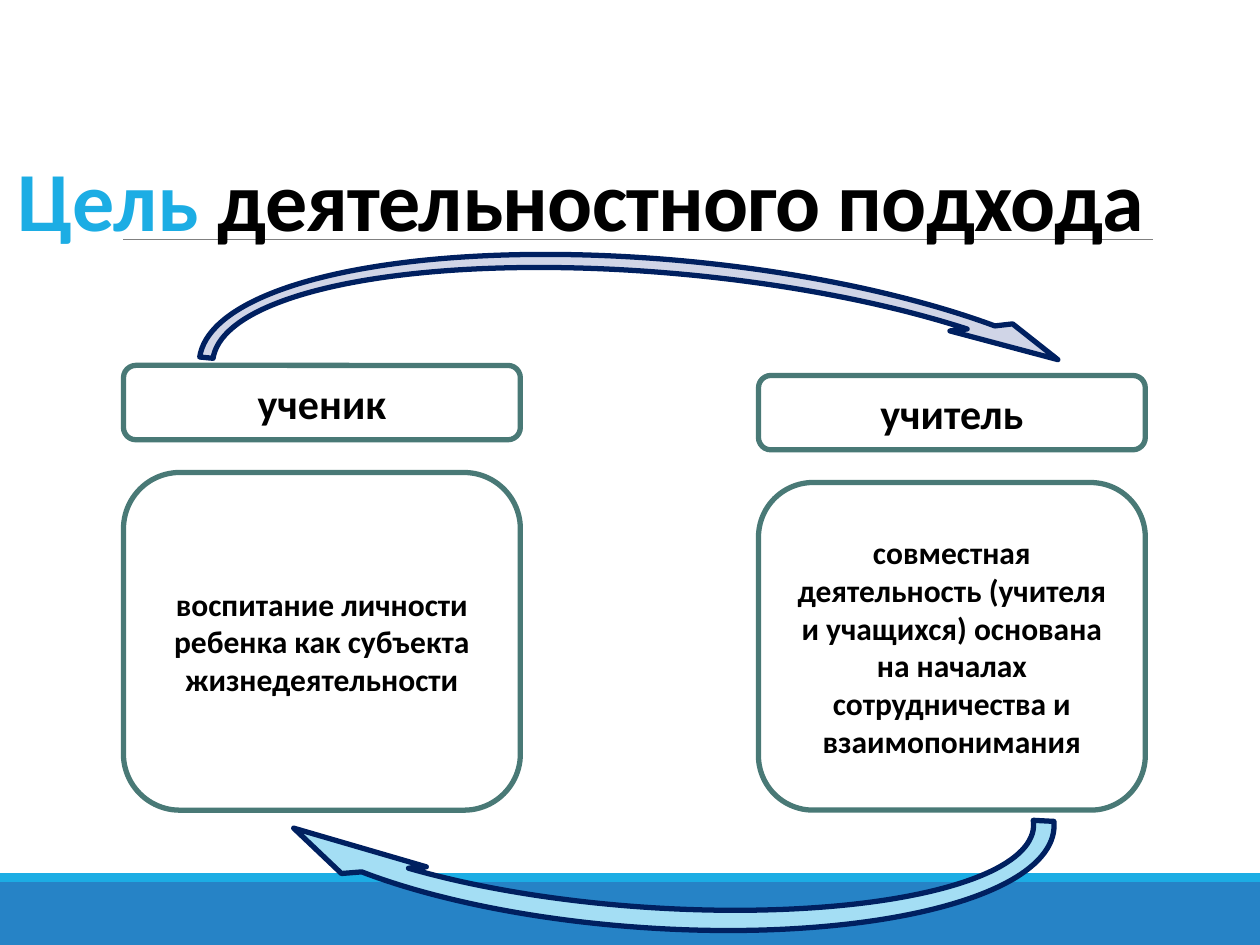
from dataclasses import dataclass
from lxml.etree import SubElement
from pptx import Presentation
from pptx.dml.color import RGBColor
from pptx.enum.shapes import MSO_CONNECTOR, MSO_SHAPE
from pptx.enum.text import MSO_ANCHOR, PP_ALIGN
from pptx.oxml.ns import qn
from pptx.util import Inches, Pt


@dataclass(frozen=True)
class Theme:
    font: str = "Calibri"
    title_size: int = 48
    heading_size: int = 24
    body_size: int = 18
    text: str = "000000"
    accent: str = "1CADE4"
    band: str = "2683C6"
    rule: str = "808080"
    card_fill: str = "FFFFFF"
    card_line: str = "497976"
    arrow_line: str = "002060"
    arrow_top: str = "D0D5E7"
    arrow_bottom: str = "A4DEF4"


THEME = Theme()
WIDTH, HEIGHT = 10, 7.5
CARD_BOTTOM = 6.43


def rgb(value):
    return RGBColor.from_string(value)


def add_box(s, kind, box, fill, line=None):
    sp = s.shapes.add_shape(kind, *map(Inches, box))
    sp.shadow.inherit = False
    sp.fill.solid()
    sp.fill.fore_color.rgb = rgb(fill)
    if line:
        sp.line.color.rgb = rgb(line)
        sp.line.width = Pt(3)
    else:
        sp.line.fill.background()
    return sp


def set_font(font, size, color):
    font.name, font.size, font.bold = THEME.font, Pt(size), True
    font.color.rgb = rgb(color)


def add_footer(s, box):
    """Wide band with a thin accent strip along its top."""
    left, top, width, height = box
    strip = 0.07
    add_box(s, MSO_SHAPE.RECTANGLE, (left, top + strip, width, height - strip), THEME.band)
    add_box(s, MSO_SHAPE.RECTANGLE, (left, top, width, strip), THEME.accent)


def add_rule(s, left, right, y):
    line = s.shapes.add_connector(MSO_CONNECTOR.STRAIGHT, *map(Inches, (left, y, right, y)))
    line.line.color.rgb = rgb(THEME.rule)
    line.line.width = Pt(0.5)
    SubElement(line._element.spPr, qn("a:effectLst"))


def add_title(s, box, accent_text, text):
    tf = s.shapes.add_textbox(*map(Inches, box)).text_frame
    tf.word_wrap = True
    tf.vertical_anchor = MSO_ANCHOR.BOTTOM
    p = tf.paragraphs[0]
    p.line_spacing = 0.85
    for words, color in ((accent_text, THEME.accent), (text, THEME.text)):
        r = p.add_run()
        r.text = words
        set_font(r.font, THEME.title_size, color)
    r.font._element.set("spc", "-50")  # slightly tighter letters


def add_card(s, box, text, size):
    sp = add_box(s, MSO_SHAPE.ROUNDED_RECTANGLE, box, THEME.card_fill, THEME.card_line)
    tf = sp.text_frame
    tf.word_wrap = True
    tf.vertical_anchor = MSO_ANCHOR.MIDDLE
    p = tf.paragraphs[0]
    p.text = text
    p.alignment = PP_ALIGN.CENTER
    set_font(p.font, size, THEME.text)


def add_role(s, box, heading, body):
    """Heading card above a body card that fills the rest of the box."""
    left, top, width, height = box
    head, gap = 0.59, 0.26
    add_card(s, (left, top, width, head), heading, THEME.heading_size)
    offset = head + gap
    add_card(s, (left, top + offset, width, height - offset), body, THEME.body_size)


def add_arrow(s, box, fill, rotation, adjustments, flipped=False):
    sp = add_box(s, MSO_SHAPE.CIRCULAR_ARROW, box, fill, THEME.arrow_line)
    for i, value in enumerate(adjustments):
        sp.adjustments[i] = value
    sp.rotation = rotation
    if flipped:
        xfrm = sp._element.spPr.find(qn("a:xfrm"))
        xfrm.set("flipH", "1")
        xfrm.set("flipV", "1")


def main():
    prs = Presentation()
    prs.slide_width, prs.slide_height = Inches(WIDTH), Inches(HEIGHT)
    s = prs.slides.add_slide(prs.slide_layouts[6])

    # Background bands and title
    add_footer(s, (0, 6.93, WIDTH, HEIGHT - 6.93))
    add_rule(s, 0.98, 9.15, 1.9)
    add_title(s, (0.04, 0.68, 9.77, 1.34), "Цель ", "деятельностного подхода")

    # Pupil and teacher columns
    roles = (
        (0.98, 2.9, 3.15, "ученик",
         "воспитание личности ребенка как субъекта жизнедеятельности"),
        (6.02, 2.98, 3.07, "учитель",
         "совместная деятельность (учителя и учащихся) основана "
         "на началах сотрудничества и взаимопонимания"),
    )
    for left, top, width, heading, body in roles:
        add_role(s, (left, top, width, CARD_BOTTOM - top), heading, body)

    # Arrows from pupil to teacher and back
    add_arrow(s, (1.37, 1.87, 7.92, 2.66), THEME.arrow_top, 5.3,
              (0.04, 4.388, 204.577, 108.169, 0.094))
    add_arrow(s, (1.68, 5.08, 6.95, 2.54), THEME.arrow_bottom, 4,
              (0.064, 6.162, 204.723, 107.415, 0.133), flipped=True)

    prs.save("out.pptx")


if __name__ == "__main__":
    main()
